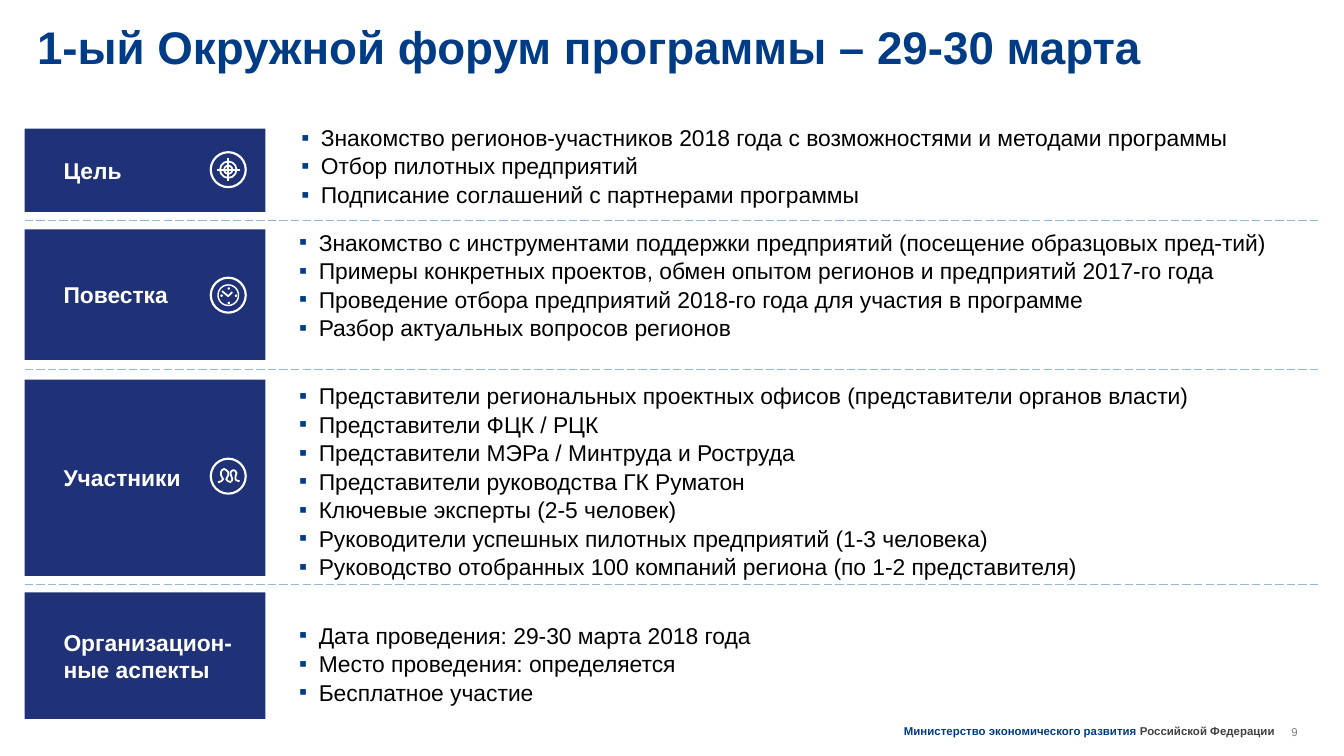
from lxml import etree
from pptx import Presentation
from pptx import util as u
from pptx.dml.color import RGBColor
from pptx.enum import dml, shapes, text
from pptx.oxml import ns

PX = 9144  # 100 px to the inch
NAVY = RGBColor(0x20, 0x32, 0x77)
BLUE = RGBColor(0x00, 0x3C, 0x86)
PALE_BLUE = RGBColor(0x92, 0xB8, 0xD2)
DARK_GREY = RGBColor(0x40, 0x40, 0x40)
GREY = RGBColor(0x80, 0x80, 0x80)
BLACK = RGBColor(0, 0, 0)
WHITE = RGBColor(0xFF, 0xFF, 0xFF)

BLOCK_LEFT, BLOCK_WIDTH, RULE_RIGHT = 24, 234, 1283
BULLET_INDENT = 19
FRAME = {"word_wrap": True, "auto_size": text.MSO_AUTO_SIZE.NONE}
TIGHT = {"margin_left": 0, "margin_right": 0, "margin_top": 0, "margin_bottom": 0}

# label, block top and height, list left, top, width and height, list items
SECTIONS = [
    ("Цель", 125, 81, (283, 114, 984, 91), [
        "Знакомство регионов-участников 2018 года с возможностями и методами программы",
        "Отбор пилотных предприятий",
        "Подписание соглашений с партнерами программы"]),
    ("Повестка", 223, 127, (281, 216, 1002, 118), [
        "Знакомство с инструментами поддержки предприятий (посещение образцовых пред-тий)",
        "Примеры конкретных проектов, обмен опытом регионов и предприятий 2017-го года",
        "Проведение отбора предприятий 2018-го года для участия в программе",
        "Разбор актуальных вопросов регионов"]),
    ("Участники", 369, 191, (281, 365, 984, 199), [
        "Представители региональных проектных офисов (представители органов власти)",
        "Представители ФЦК / РЦК",
        "Представители МЭРа / Минтруда и Роструда",
        "Представители руководства ГК Руматон",
        "Ключевые эксперты (2-5 человек)",
        "Руководители успешных пилотных предприятий (1-3 человека)",
        "Руководство отобранных 100 компаний региона (по 1-2 представителя)"]),
    ("Организацион-\nные аспекты", 576, 123, (281, 598, 984, 91), [
        "Дата проведения: 29-30 марта 2018 года",
        "Место проведения: определяется",
        "Бесплатное участие"]),
]

# left, top, diameter, line width in points
ICON_CIRCLES = [(205, top, 34, 1.5) for top in (148, 270, 446)]
ICON_CIRCLES += [(214, 157, 16, 1.25), (218, 161, 8, 1.25), (212, 277, 20, 1)]
ICON_CIRCLES += [(left, top, 1, 1) for left, top in
                 ((222, 280), (222, 294), (215, 287), (229, 287))]
ICON_CURVES = [
    [(216, 283), (222, 288), (226, 284)],
    [(212, 469), (215, 468), (217, 466), (215, 462), (215, 459), (216, 457), (218, 456),
     (220, 457), (222, 459), (222, 462), (220, 466), (222, 468), (225, 469)],
    [(225, 468), (226, 466), (225, 463), (224, 460), (225, 458), (227, 457),
     (229, 458), (230, 460), (229, 463), (229, 466), (230, 467), (233, 468)],
]


def write(para, string, color, size=16, bold=False):
    span = para.add_run()
    span.text = string
    look = {"name": "Arial", "size": u.Pt(size), "bold": bold}
    for name, value in look.items():
        setattr(span.font, name, value)
    span.font.color.rgb = color


def draw_line(x1, y1, x2, y2, color, width):
    line = page.shapes.add_connector(
        shapes.MSO_CONNECTOR.STRAIGHT, *(n * PX for n in (x1, y1, x2, y2)))
    line.line.color.rgb = color
    line.line.width = u.Pt(width)
    etree.SubElement(line._element.spPr, ns.qn("a:effectLst"))
    return line


deck = Presentation()
deck.slide_width, deck.slide_height = 1307 * PX, 735 * PX
page = deck.slides.add_slide(deck.slide_layouts.get_by_name("Comparison"))
title, *lists = page.placeholders

title.left, title.top, title.width, title.height = (n * PX for n in (36, 18, 1155, 54))
for name, value in {**FRAME, **TIGHT}.items():
    setattr(title.text_frame, name, value)
para = title.text_frame.paragraphs[0]
para.alignment = text.PP_ALIGN.LEFT
write(para, "1-ый Окружной форум программы – 29-30 марта", BLUE, 32, True)

for box, (label, top, height, place, items) in zip(lists, SECTIONS):
    box.left, box.top, box.width, box.height = (n * PX for n in place)
    for name, value in {**FRAME, "vertical_anchor": text.MSO_ANCHOR.TOP}.items():
        setattr(box.text_frame, name, value)
    for number, item in enumerate(items):
        para = box.text_frame.add_paragraph() if number else box.text_frame.paragraphs[0]
        para.space_before = u.Pt(0)
        para.line_spacing = 1.04
        props = para._p.get_or_add_pPr()
        props.set("marL", str(BULLET_INDENT * PX))
        props.set("indent", str(-BULLET_INDENT * PX))
        bullet_color = etree.SubElement(props, ns.qn("a:buClr"))
        etree.SubElement(bullet_color, ns.qn("a:srgbClr"), val=str(BLUE))
        etree.SubElement(props, ns.qn("a:buFont"), typeface="Arial")
        etree.SubElement(props, ns.qn("a:buChar"), char="▪")
        write(para, item, BLACK)

    block = page.shapes.add_shape(
        shapes.MSO_SHAPE.RECTANGLE, *(n * PX for n in (BLOCK_LEFT, top, BLOCK_WIDTH, height)))
    block.shadow.inherit = False
    block.fill.solid()
    block.fill.fore_color.rgb = NAVY
    block.line.fill.background()
    para = block.text_frame.paragraphs[0]
    para.alignment = text.PP_ALIGN.LEFT
    para._p.get_or_add_pPr().set("marL", str(28 * PX))
    for number, part in enumerate(label.split("\n")):
        if number:
            para.add_line_break()
        write(para, part, WHITE, bold=True)

for y in (214, 359, 568):
    rule = draw_line(BLOCK_LEFT, y, RULE_RIGHT, y, PALE_BLUE, 0.75)
    rule.line.dash_style = dml.MSO_LINE.LONG_DASH

for left, top, size, width in ICON_CIRCLES:
    circle = page.shapes.add_shape(
        shapes.MSO_SHAPE.OVAL, *(n * PX for n in (left, top, size, size)))
    circle.shadow.inherit = False
    circle.fill.background()
    circle.line.color.rgb = WHITE
    circle.line.width = u.Pt(width)
draw_line(222, 154, 222, 176, WHITE, 1.25)
draw_line(211, 165, 233, 165, WHITE, 1.25)
for start, *points in ICON_CURVES:
    outline = page.shapes.build_freeform(*start, scale=PX)
    outline.add_line_segments(points, close=False)
    curve = outline.convert_to_shape()
    curve.shadow.inherit = False
    curve.fill.background()
    curve.line.color.rgb = WHITE
    curve.line.width = u.Pt(1.25)

FOOTERS = [
    ((879, 699, 398, 24), {**FRAME, "margin_left": 0},
     [("Министерство экономического развития ", BLUE, 8, True),
      ("Российской Федерации", DARK_GREY, 8, True)]),
    ((1256, 705, 14, 13), {**TIGHT, "word_wrap": False,
                           "vertical_anchor": text.MSO_ANCHOR.MIDDLE},
     [("9", GREY, 8, False)]),
]
for place, frame, spans in FOOTERS:
    box = page.shapes.add_textbox(*(n * PX for n in place))
    for name, value in frame.items():
        setattr(box.text_frame, name, value)
    for span in spans:
        write(box.text_frame.paragraphs[0], *span)

deck.save("out.pptx")
